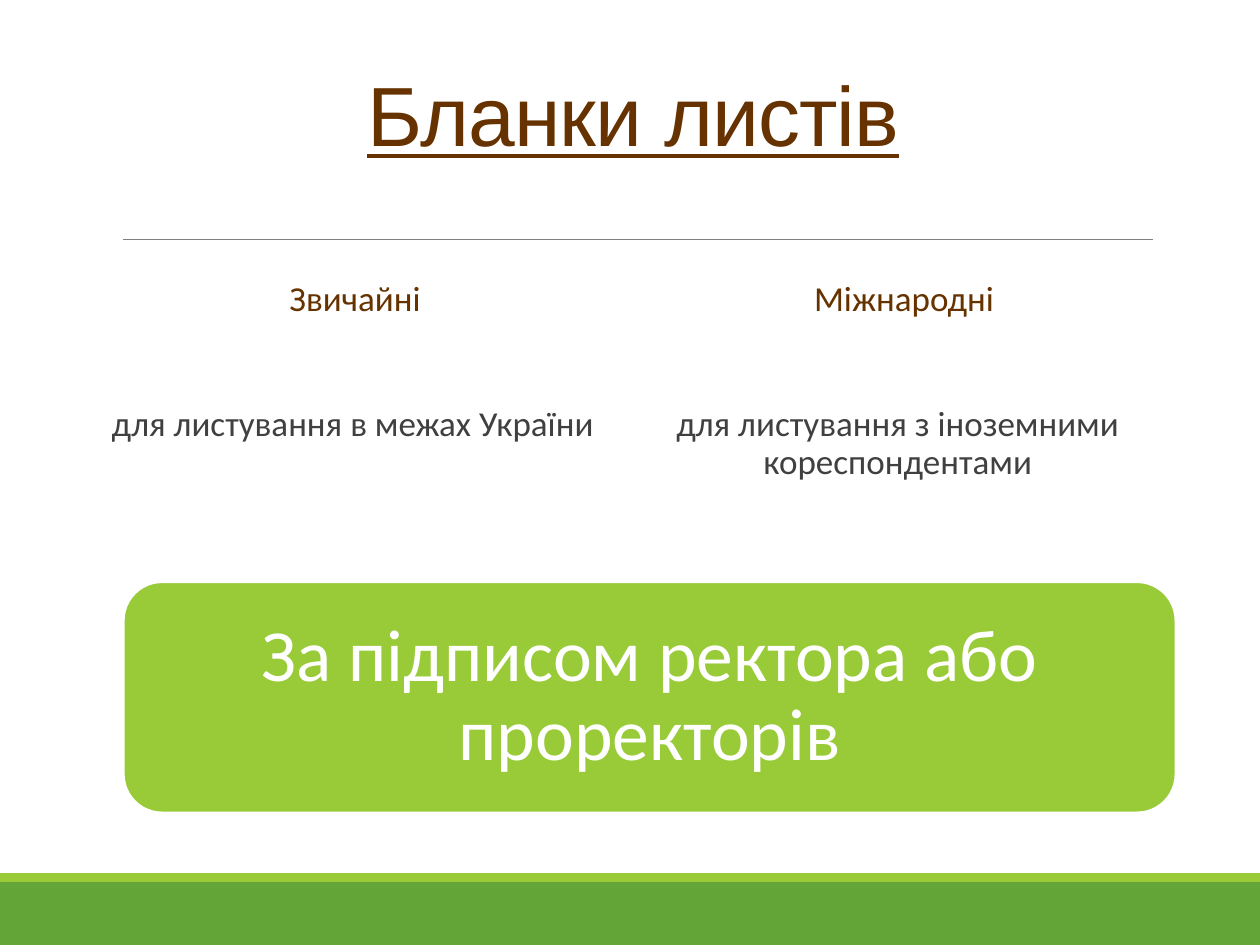
from dataclasses import dataclass, field
from typing import Any

from lxml.etree import SubElement as Sub
from pptx import Presentation
from pptx.dml.color import RGBColor as Rgb
from pptx.enum.shapes import MSO_CONNECTOR as Link, MSO_SHAPE as Kind
from pptx.enum.text import MSO_ANCHOR as Anchor, PP_ALIGN as Align
from pptx.oxml.ns import qn
from pptx.util import Pt

HUES = {
    "green": "63A537",
    "lime": "99CB38",
    "rule": "808080",
    "brown": "663300",
    "dark": "404040",
    "white": "FFFFFF",
}
Rect = tuple[float, float, float, float]


def hue(name: str) -> Rgb:
    return Rgb.from_string(HUES[name])


def apply(target: Any, form: dict[str, Any]) -> None:
    for key, value in form.items():
        setattr(target, key, value)


@dataclass
class Para:
    text: str
    size: float
    color: str
    para: dict[str, Any] = field(default_factory=dict)
    font: dict[str, Any] = field(default_factory=dict)
    attrs: dict[str, str] = field(default_factory=dict)
    inset: float = 0


@dataclass
class Column:
    rect: Rect
    head: str
    body: str


def write(shape: Any, paras: list[Para], anchor: Any, side: float, edge: float) -> None:
    frame = shape.text_frame
    apply(frame, {
        "word_wrap": True,
        "vertical_anchor": anchor,
        "margin_left": Pt(side),
        "margin_right": Pt(side),
        "margin_top": Pt(edge),
        "margin_bottom": Pt(edge),
    })
    for i, item in enumerate(paras):
        par = frame.add_paragraph() if i else frame.paragraphs[0]
        apply(par, {"alignment": Align.CENTER, "line_spacing": 0.9} | item.para)
        if item.inset:
            par._p.get_or_add_pPr().set("marL", str(Pt(item.inset)))
        run = par.add_run()
        run.text = item.text
        apply(run.font, {"name": "Calibri", "size": Pt(item.size)} | item.font)
        run.font.color.rgb = hue(item.color)
        for key, value in item.attrs.items():
            run._r.get_or_add_rPr().set(key, value)


def panel(slide: Any, kind: Any, rect: Rect, color: str) -> Any:
    shape = slide.shapes.add_shape(kind, *map(Pt, rect))
    shape.shadow.inherit = False
    shape.fill.solid()
    shape.fill.fore_color.rgb = hue(color)
    shape.line.fill.background()
    return shape


def rule(slide: Any, left: float, right: float, top: float) -> None:
    line = slide.shapes.add_connector(Link.STRAIGHT, Pt(left), Pt(top), Pt(right), Pt(top))
    line.line.color.rgb = hue("rule")
    line.line.width = Pt(0.5)
    Sub(line._element.spPr, qn("a:effectLst"))


def label(slide: Any, rect: Rect, paras: list[Para], anchor: Any, side: float) -> None:
    write(slide.shapes.add_textbox(*map(Pt, rect)), paras, anchor, side, 3.6)


def column(slide: Any, col: Column) -> None:
    gap = {"space_after": Pt(2)}
    label(slide, col.rect, [
        Para(col.head, 20, "brown", gap | {"space_before": Pt(12)}, inset=7.2),
        Para(col.body, 20, "dark", gap | {"space_before": Pt(48)}),
    ], Anchor.TOP, 0)


def main() -> None:
    deck = Presentation()
    apply(deck, {"slide_width": Pt(720), "slide_height": Pt(540)})
    slide = deck.slides.add_slide(deck.slide_layouts[6])

    panel(slide, Kind.RECTANGLE, (0, 504, 720, 36), "green")
    panel(slide, Kind.RECTANGLE, (0, 499, 720, 5), "lime")
    rule(slide, 70.5, 658.8, 136.8)

    title = Para("Бланки листів", 48, "brown", {"line_spacing": 0.85},
                 {"name": "Arial", "underline": True}, {"spc": "-50"})
    label(slide, (64.8, 22.3, 594, 74.9), [title], Anchor.BOTTOM, 7.2)

    for col in (
        Column((42.5, 157, 318.2, 368), "Звичайні ", "для листування в межах України"),
        Column((367.2, 157, 291.6, 305), "Міжнародні",
               "для листування з іноземними кореспондентами"),
    ):
        column(slide, col)

    card = panel(slide, Kind.ROUNDED_RECTANGLE, (70.6, 332.6, 601.2, 131.8), "lime")
    card.line.color.rgb = hue("white")
    card.line.width = Pt(1.25)
    note = Para("За підписом ректора або проректорів", 42, "white")
    write(card, [note], Anchor.MIDDLE, 12.2, 12.2)

    deck.save("out.pptx")


if __name__ == "__main__":
    main()
